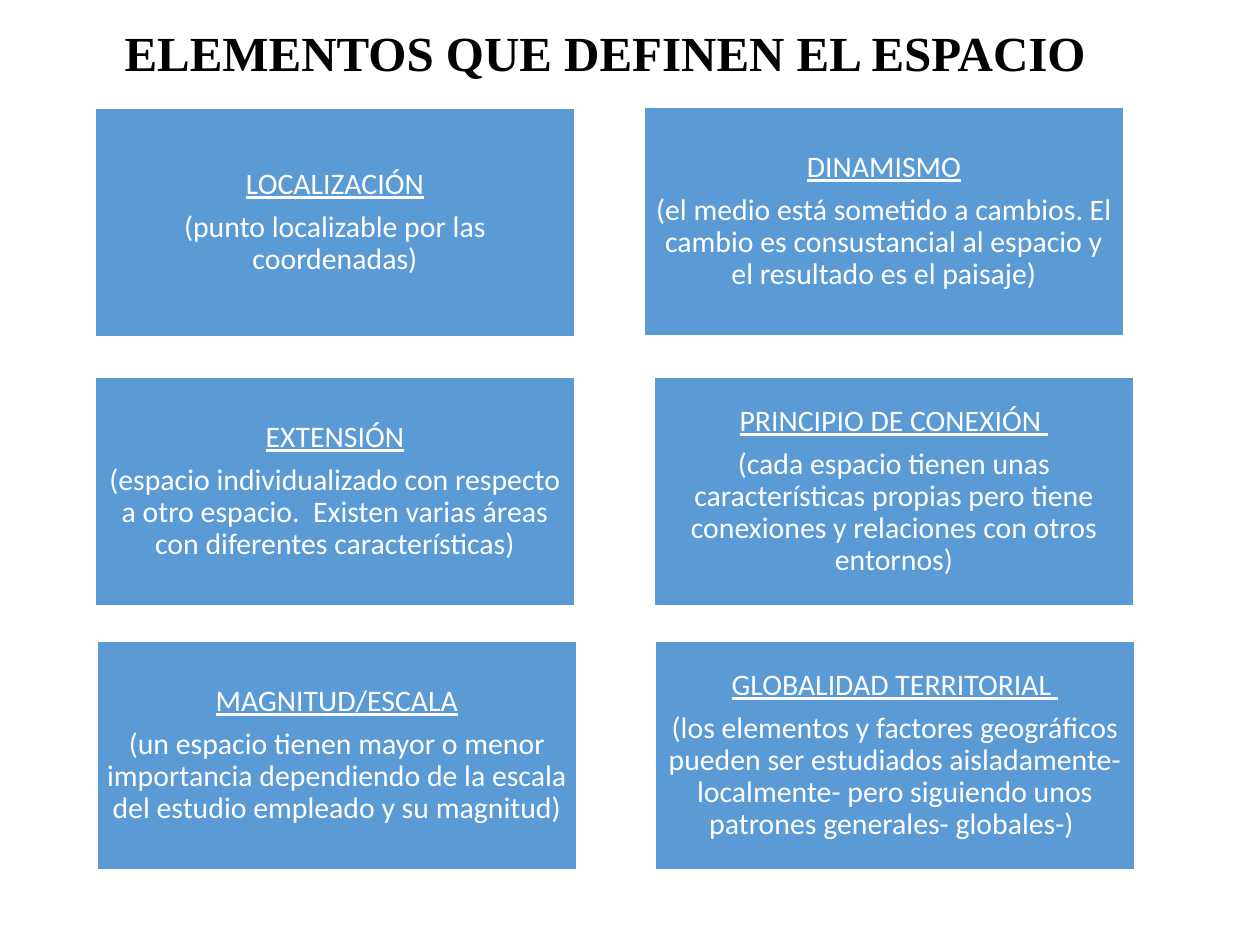
from dataclasses import dataclass

from pptx import Presentation
from pptx.dml.color import RGBColor
from pptx.enum.shapes import MSO_SHAPE
from pptx.enum.text import MSO_ANCHOR, MSO_AUTO_SIZE, PP_ALIGN
from pptx.slide import Slide
from pptx.util import Emu, Pt

RECTANGLE = MSO_SHAPE.RECTANGLE
TOP, MIDDLE = MSO_ANCHOR.TOP, MSO_ANCHOR.MIDDLE
FIT_SHAPE, NO_FIT = MSO_AUTO_SIZE.SHAPE_TO_FIT_TEXT, MSO_AUTO_SIZE.NONE
CENTER = PP_ALIGN.CENTER

BLUE = RGBColor(0x5B, 0x9B, 0xD5)
WHITE = RGBColor(0xFF, 0xFF, 0xFF)
BLACK = RGBColor(0x00, 0x00, 0x00)

PX_PER_INCH = 126
SLIDE_WIDTH, SLIDE_HEIGHT = 1260, 945
CARD_WIDTH, CARD_HEIGHT, CARD_INSET = 480, 229, 9


@dataclass(frozen=True)
class Card:
    left: int
    top: int
    heading: str
    description: str


CARDS = [
    Card(95, 108, "LOCALIZACIÓN", "(punto localizable por las coordenadas)"),
    Card(644, 107, "DINAMISMO",
         "(el medio está sometido a cambios. El cambio es consustancial al "
         "espacio y el resultado es el paisaje)"),
    Card(95, 377, "EXTENSIÓN",
         "(espacio individualizado con respecto a otro espacio.  Existen "
         "varias áreas con diferentes características)"),
    Card(654, 377, "PRINCIPIO DE CONEXIÓN ",
         "(cada espacio tienen unas características propias pero tiene "
         "conexiones y relaciones con otros entornos)"),
    Card(97, 641, "MAGNITUD/ESCALA",
         "(un espacio tienen mayor o menor importancia dependiendo de la "
         "escala del estudio empleado y su magnitud)"),
    Card(655, 641, "GLOBALIDAD TERRITORIAL ",
         "(los elementos y factores geográficos pueden ser estudiados "
         "aisladamente- localmente- pero siguiendo unos patrones generales- "
         "globales-) "),
]


def px(length: int) -> Emu:
    return Emu(round(length * 914400 / PX_PER_INCH))


def format_title(slide: Slide, text: str) -> None:
    title = slide.shapes.title
    title.left, title.top, title.width, title.height = (
        px(25), px(16), px(1160), px(72))
    text_frame = title.text_frame
    text_frame.text = text
    text_frame.word_wrap = True
    text_frame.auto_size = FIT_SHAPE
    text_frame.vertical_anchor = TOP
    paragraph = text_frame.paragraphs[0]
    paragraph.alignment = CENTER
    font = paragraph.runs[0].font
    font.name, font.size, font.bold = "Times New Roman", Pt(28), True
    font.color.rgb = BLACK


def draw_card(slide: Slide, card: Card) -> None:
    shape = slide.shapes.add_shape(
        RECTANGLE, px(card.left), px(card.top), px(CARD_WIDTH), px(CARD_HEIGHT))
    shape.shadow.inherit = False
    shape.fill.solid()
    shape.fill.fore_color.rgb = BLUE
    shape.line.color.rgb = WHITE
    shape.line.width = Pt(1)

    text_frame = shape.text_frame
    text_frame.word_wrap = True
    text_frame.auto_size = NO_FIT
    text_frame.vertical_anchor = MIDDLE
    text_frame.margin_left = text_frame.margin_right = px(CARD_INSET)
    text_frame.margin_top = text_frame.margin_bottom = px(CARD_INSET)
    text_frame.text = f"{card.heading}\n{card.description}"
    for index, paragraph in enumerate(text_frame.paragraphs):
        paragraph.alignment = CENTER
        paragraph.line_spacing = 0.9
        paragraph.space_after = Pt(6)
        font = paragraph.runs[0].font
        font.name, font.size = "Calibri", Pt(17)
        font.underline = index == 0
        font.color.rgb = WHITE


def main() -> None:
    presentation = Presentation()
    presentation.slide_width = px(SLIDE_WIDTH)
    presentation.slide_height = px(SLIDE_HEIGHT)
    # Title-only layout
    slide = presentation.slides.add_slide(presentation.slide_layouts[5])

    format_title(slide, "ELEMENTOS QUE DEFINEN EL ESPACIO")

    # One card for each element of space
    for card in CARDS:
        draw_card(slide, card)

    presentation.save("out.pptx")


if __name__ == "__main__":
    main()
